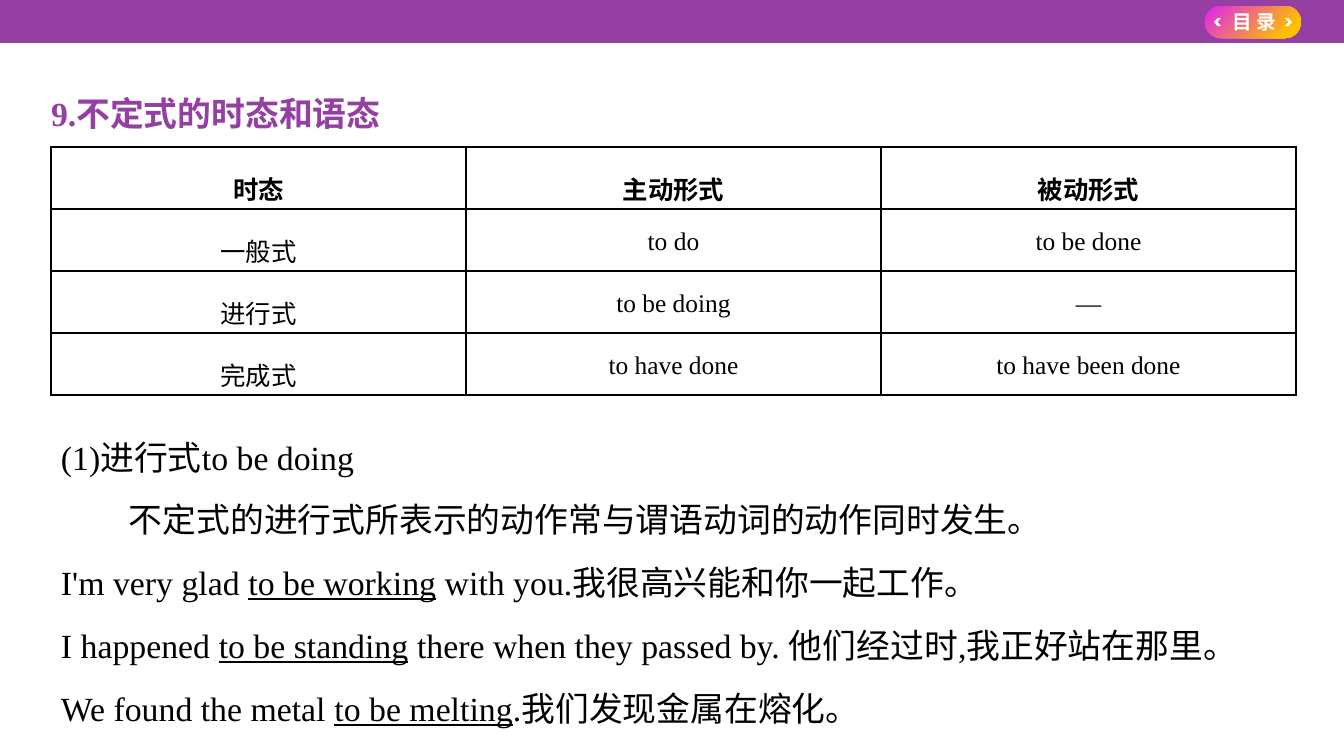
from lxml import etree
from pptx import Presentation
from pptx.dml.color import RGBColor
from pptx.enum.shapes import MSO_SHAPE
from pptx.enum.text import MSO_ANCHOR, PP_ALIGN
from pptx.oxml.ns import qn
from pptx.util import Pt

PX = 914400 / 101
CENTER = PP_ALIGN.CENTER
TOP, MIDDLE = MSO_ANCHOR.TOP, MSO_ANCHOR.MIDDLE
RECTANGLE = MSO_SHAPE.RECTANGLE
CAPSULE = MSO_SHAPE.FLOWCHART_TERMINATOR
CHEVRON = MSO_SHAPE.CHEVRON
SERIF, SANS = "Times New Roman", "Noto Sans CJK SC"
PURPLE, BLACK, WHITE = "953FA3", "000000", "FFFFFF"


def px(*lengths):
    return [round(length * PX) for length in lengths]


def style_runs(paragraph, size, color, bold=False, latin=SERIF):
    for run in paragraph.runs:
        run.font.size = Pt(size)
        run.font.bold = bold
        run.font.name = latin
        run.font.color.rgb = RGBColor.from_string(color)
        east_asian = etree.SubElement(run.font._element, qn("a:ea"))
        east_asian.set("typeface", SANS)


prs = Presentation()
prs.slide_width, prs.slide_height = px(1344, 756)
slide = prs.slides.add_slide(prs.slide_layouts[5])
shapes = slide.shapes

# Header band and contents button
for kind, box, color, rotation in [
    (RECTANGLE, (0, 0, 1344, 43), PURPLE, 0),
    (CAPSULE, (1205, 6, 96, 32), None, 0),
    (CHEVRON, (1285, 18, 7, 8), WHITE, 0),
    (CHEVRON, (1214, 18, 7, 8), WHITE, 180),
]:
    shape = shapes.add_shape(kind, *px(*box))
    shape.shadow.inherit = False
    shape.line.fill.background()
    shape.rotation = rotation
    if color:
        shape.fill.solid()
        shape.fill.fore_color.rgb = RGBColor.from_string(color)
    else:
        shape.fill.gradient()
        shape.fill.gradient_angle = 315
        for stop, position, stop_color in zip(
            shape.fill.gradient_stops, (0, 0.84), ("DE21F5", "FFC000")
        ):
            stop.position = position
            stop.color.rgb = RGBColor.from_string(stop_color)

contents = shapes.add_textbox(*px(1221, 5, 67, 34)).text_frame
contents.text = "目 录"
contents.word_wrap = False
contents.vertical_anchor = MIDDLE
contents.paragraphs[0].alignment = CENTER
style_runs(contents.paragraphs[0], 14, WHITE, bold=True, latin=SANS)

# Heading
heading = shapes.title
heading.left, heading.top, heading.width, heading.height = px(51, 72, 1244, 62)
frame = heading.text_frame
frame.text = "9.不定式的时态和语态"
frame.vertical_anchor = TOP
frame.margin_left = frame.margin_right = frame.margin_top = frame.margin_bottom = 0
frame.paragraphs[0].alignment = PP_ALIGN.LEFT
frame.paragraphs[0].line_spacing = 1.5
frame.paragraphs[0].space_before = Pt(1.4)
style_runs(frame.paragraphs[0], 24.1, PURPLE, bold=True)

# Tense and voice table
forms = [
    ("时态", "主动形式", "被动形式"),
    ("一般式", "to do", "to be done"),
    ("进行式", "to be doing", "—"),
    ("完成式", "to have done", "to have been done"),
]
table = shapes.add_table(4, 3, *px(51, 147, 1245, 248)).table
table.first_row = table.horz_banding = False
for row, texts in enumerate(forms):
    for column, text in enumerate(texts):
        cell = table.cell(row, column)
        cell.text = text
        cell.margin_left, cell.margin_right = px(5, 5)
        cell.margin_top, cell.margin_bottom = px(5, 5)
        paragraph = cell.text_frame.paragraphs[0]
        paragraph.alignment = CENTER
        paragraph.line_spacing = 1.5
        style_runs(paragraph, 18.1, BLACK, bold=row == 0)
        properties = cell._tc.get_or_add_tcPr()
        for side in ("a:lnL", "a:lnR", "a:lnT", "a:lnB"):
            border = etree.SubElement(properties, qn(side), w=str(Pt(1)))
            fill = etree.SubElement(border, qn("a:solidFill"))
            etree.SubElement(fill, qn("a:srgbClr"), val=BLACK)
        cell.fill.background()

# Explanation and examples; bars enclose the underlined words
lines = [
    "(1)进行式to be doing",
    "不定式的进行式所表示的动作常与谓语动词的动作同时发生。",
    "I'm very glad |to be working| with you.我很高兴能和你一起工作。",
    "I happened |to be standing| there when they passed by. 他们经过时,我正好站在那里。",
    "We found the metal |to be melting|.我们发现金属在熔化。",
]
explanation = shapes.add_textbox(*px(51, 411, 1244, 325)).text_frame
explanation.word_wrap = True
for index, line in enumerate(lines):
    paragraph = explanation.add_paragraph() if index else explanation.paragraphs[0]
    paragraph.line_spacing = 1.5
    paragraph.space_before = Pt(1.4)
    for part, words in enumerate(line.split("|")):
        run = paragraph.add_run()
        run.text = words
        run.font.underline = part == 1
    style_runs(paragraph, 24.1, BLACK)
indent, = px(68)
explanation.paragraphs[1]._p.get_or_add_pPr().set("indent", str(indent))

prs.save("out.pptx")
